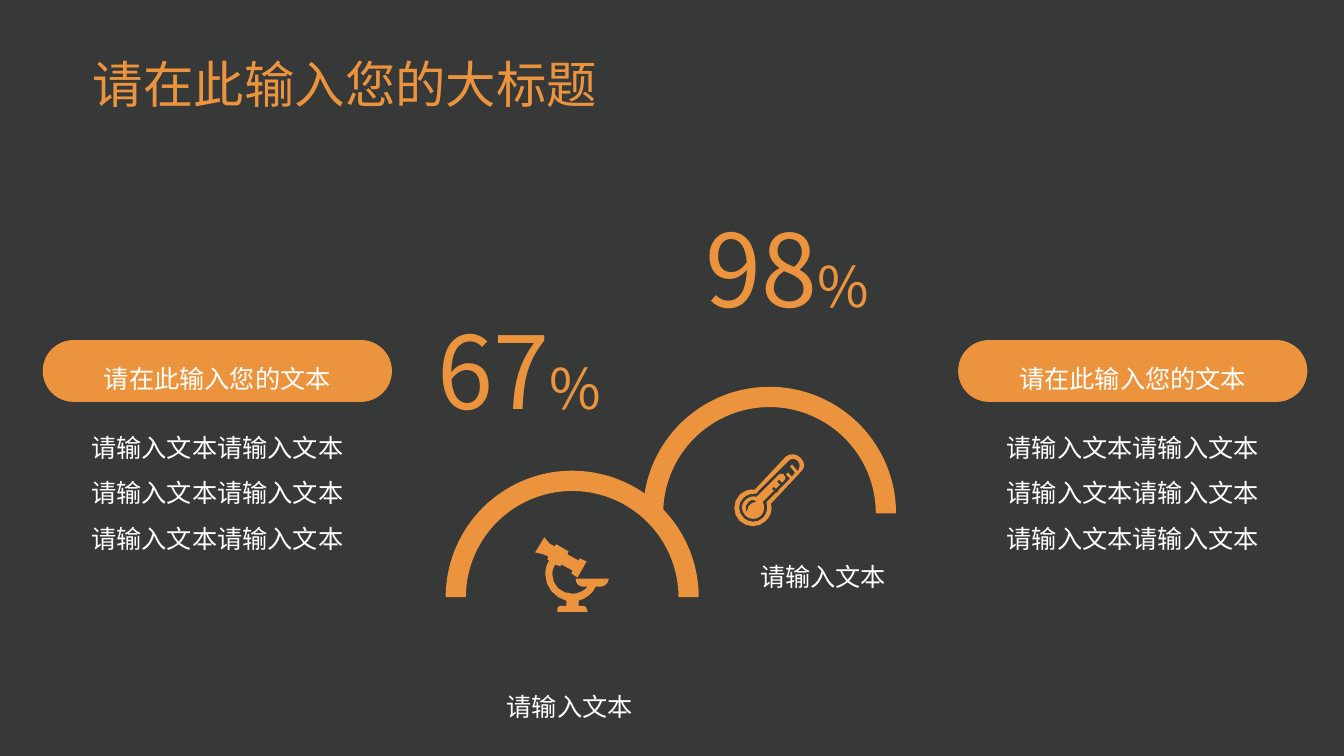
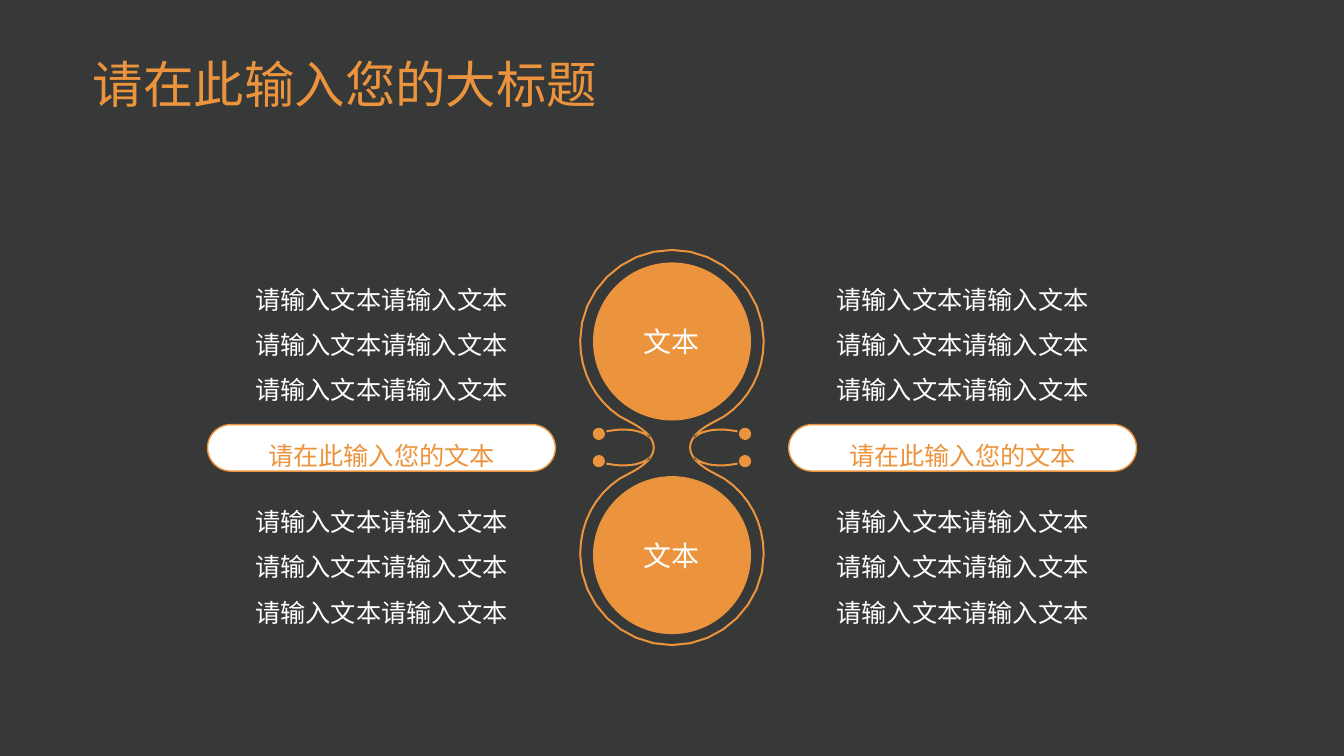
import math
import pptx
import pptx.util
import pptx.dml.color
import pptx.enum.shapes
import pptx.enum.text
import lxml.etree

KIND = pptx.enum.shapes.MSO_SHAPE
ALIGN = pptx.enum.text.PP_ALIGN
ANCHOR = pptx.enum.text.MSO_ANCHOR
FONT = "Noto Sans CJK SC"
GRAY, DARK, GOLD, WHITE = "585858", "373838", "EB943D", "FFFFFF"
PAGE = (0, 0, 13.33, 7.5)
TITLE = "请在此输入您的大标题"
HEAD = "请在此输入您的文本"
LABEL = "请输入文本"
BODY = LABEL * 6

HEAT = """M 68 18 L 38 50 C 40 56 38 62 33 67 C 26 74 15 74 7 67 C 0 60 0 48 7 41
C 12 37 17 35 22 36 L 53 3 C 57 0 63 0 67 4 L 68 5 C 72 9 72 15 68 18
M 65 8 L 64 7 C 62 5 58 5 56 7 L 25 38 C 25 40 22 40 22 40 C 18 40 14 41 11 44
C 5 49 5 58 11 64 C 16 69 25 69 30 64 C 34 60 35 55 34 50 C 34 50 33 48 35 47
L 43 39 44 39 46 37 45 37 49 33 51 31 57 25 53 21 55 19 59 23 62 19 57 13 59 11
64 17 65 17 C 67 14 67 10 65 8
M 49 29 L 46 26 44 28 47 31 43 35 41 33 39 35 41 37 30 48 C 32 53 32 58 28 62
C 24 66 17 66 13 62 C 8 57 8 50 13 46 C 16 43 20 42 24 43 L 46 21
C 47 20 49 20 51 21 L 51 22 C 53 23 53 25 51 27
M 16 48 C 11 52 14 59 14 58 C 15 48 24 48 24 48 C 24 48 20 44 16 48"""
SCOPE = """M 36 36 L 37 33 26 27 25 29 20 27 C 18 30 17 33 17 37 C 17 48 26 56 37 56
C 43 56 49 53 52 49 L 47 49 C 43 49 40 45 40 41 L 73 41 C 73 45 69 49 65 49
L 60 49 C 57 56 50 61 43 63 L 43 68 48 68 C 51 68 52 74 52 74 L 22 74
C 22 74 21 68 25 68 L 31 68 31 63 C 19 60 10 49 10 37 C 10 32 11 27 14 23
L 12 22 13 19 8 17 0 15 9 0 14 6 19 9 21 7 33 14 32 17 43 23 44 21 51 24 42 40"""
CURL = """M 0 -196 C 50 -196 91 -155 91 -106 C 91 -74 76 -47 52 -31 L 39 -24
C 28 -18 18 -10 18 0 M 22 -10 C 32 -19 50 -19 65 -16"""


def color(code):
    return pptx.dml.color.RGBColor.from_string(code)


def cell(box, left, top, wide, high):
    x, y, w, h = box
    return (x + w * left / 100, y + h * top / 100, w * wide / 100, h * high / 100)


def emu(box):
    return [pptx.util.Inches(v) for v in box]


def paint(item, fill, line=None):
    item.shadow.inherit = False
    item.fill.solid()
    item.fill.fore_color.rgb = color(fill)
    if line:
        item.line.color.rgb = color(line)
        item.line.width = pptx.util.Pt(1)
    else:
        item.line.fill.background()
    return item


def shape(slide, kind, box, fill, line=None):
    return paint(slide.shapes.add_shape(kind, *emu(box)), fill, line)


def write(item, *parts, hue=WHITE, align=ALIGN.CENTER, gap=1.5,
          anchor=ANCHOR.MIDDLE, inset=None):
    frame = item.text_frame
    frame.word_wrap = True
    frame.vertical_anchor = anchor
    if inset is not None:
        frame.margin_left = frame.margin_right = inset
        frame.margin_top = frame.margin_bottom = inset
    para = frame.paragraphs[0]
    para.alignment = align
    para.line_spacing = gap
    for words, size in parts:
        run = para.add_run()
        run.text = words
        run.font.size = pptx.util.Pt(size)
        run.font.color.rgb = color(hue)
        run.font.name = FONT
        latin = run.font._rPr.find(pptx.oxml.ns.qn("a:latin"))
        east = lxml.etree.Element(pptx.oxml.ns.qn("a:ea"), typeface=FONT)
        latin.addnext(east)


def note(slide, box, *parts, **look):
    write(slide.shapes.add_textbox(*emu(box)), *parts, **look)


def trace(data, steps):
    lines, mode, nums = [], "M", []
    for word in data.split():
        if word in "MLC":
            mode, nums = word, []
            continue
        nums.append(float(word))
        if len(nums) < (6 if mode == "C" else 2):
            continue
        if mode == "M":
            lines.append([tuple(nums)])
        elif mode == "L":
            lines[-1].append(tuple(nums))
        else:
            ends = [lines[-1][-1], nums[:2], nums[2:4], nums[4:]]
            for step in range(1, steps + 1):
                t = step / steps
                mix = ((1 - t) ** 3, 3 * t * (1 - t) ** 2, 3 * t * t * (1 - t), t ** 3)
                lines[-1].append(tuple(
                    sum(m * p[axis] for m, p in zip(mix, ends)) for axis in (0, 1)))
        nums = []
    return lines


def band(line, half=1):
    near, far = [], []
    for spot, (x, y) in enumerate(line):
        ax, ay = line[max(spot - 1, 0)]
        bx, by = line[min(spot + 1, len(line) - 1)]
        size = math.hypot(bx - ax, by - ay) / half
        dx, dy = (ay - by) / size, (bx - ax) / size
        near.append((x + dx, y + dy))
        far.append((x - dx, y - dy))
    return near + far[::-1]


def ring(x, y, size, count=16):
    turns = [2 * math.pi * step / count for step in range(count)]
    return [(x + size * math.cos(t), y + size * math.sin(t)) for t in turns]


def draw(slide, x, y, lines):
    unit = pptx.util.Inches(0.01)
    lines = [[(a * unit, b * unit) for a, b in line] for line in lines]
    pen = slide.shapes.build_freeform(*lines[0][0])
    for count, line in enumerate(lines):
        if count:
            pen.move_to(*line[0])
        pen.add_line_segments(line[1:], close=True)
    paint(pen.convert_to_shape(*emu((x, y))), GOLD)


def base(deck):
    master = deck.slide_master
    master.background.fill.solid()
    master.background.fill.fore_color.rgb = color(GRAY)
    slide = deck.slides[0]
    cover = shape(slide, KIND.RECTANGLE, PAGE, DARK)
    master.shapes._spTree.append(cover._element)


def page(deck):
    slide = deck.slides.add_slide(deck.slide_layouts[6])
    note(slide, cell(PAGE, 6.18, 5.33, 87.62, 12.4), (TITLE, 36),
         hue=GOLD, align=ALIGN.LEFT, gap=0.9)
    return slide


def pill(slide, box, fill, hue):
    item = shape(slide, KIND.ROUNDED_RECTANGLE, box, fill, GOLD)
    item.adjustments[0] = 0.5
    write(item, (HEAD, 18), hue=hue)


def panel(slide, box):
    pill(slide, cell(box, 0, 0, 100, 27.5), GOLD, WHITE)
    note(slide, cell(box, 10, 31.8, 80, 68), (BODY, 18))


def gauge(slide, box, value, icon, top, low):
    arc = shape(slide, KIND.BLOCK_ARC, box, GOLD)
    for spot, size in enumerate((108, 0, 0.08)):
        arc.adjustments[spot] = size
    x, y = cell(box, 35.4, 26.3, 0, 0)[:2]
    draw(slide, x, y, trace(icon, 4))
    note(slide, cell(box, *top, 97.2, 51), (value, 72), ("%", 40),
         hue=GOLD, gap=1, anchor=ANCHOR.TOP, inset=0)
    note(slide, cell(box, *low, 98.4, 24.7), (LABEL, 18))


def stack(slide, box):
    pill(slide, cell(box, 0, 43.7, 100, 12.5), WHITE, GOLD)
    for top in (0.1, 59.9):
        note(slide, cell(box, 10, top, 80, 40), (BODY, 18))


def glass(slide, box):
    x, y = cell(box, 50, 50, 0, 0)[:2]
    parts = [band(line) for line in trace(CURL, 8)] + [ring(72.5, -13.5, 6)]
    signs = [(a, b) for a in (-1, 1) for b in (-1, 1)]
    draw(slide, x, y, [[(a * p, b * q) for p, q in part]
                       for a, b in signs for part in parts])
    for top in (3.4, 57.2):
        disc = shape(slide, KIND.OVAL, cell(box, 7.4, top, 85.2, 39.8), GOLD)
        write(disc, ("文本", 20), gap=1)


def main():
    deck = pptx.Presentation()
    deck.slide_width, deck.slide_height = emu(PAGE[2:])

    slide = page(deck)
    base(deck)
    gauge(slide, cell(PAGE, 47.84, 51.17, 18.83, 33.47), "98", HEAT, (8.4, -71.2), (22, 59.4))
    gauge(slide, cell(PAGE, 33.16, 62.27, 18.83, 33.47), "67", SCOPE, (-19.5, -64.1), (-0.2, 77.9))
    for left in (3.23, 71.34):
        panel(slide, cell(PAGE, left, 45.07, 25.88, 29.07))

    slide = page(deck)
    glass(slide, cell(PAGE, 43.1, 32.93, 13.8, 52.53))
    for left in (15.44, 58.68):
        stack(slide, cell(PAGE, left, 34.67, 25.88, 49.2))

    deck.save("out.pptx")


if __name__ == "__main__":
    main()
